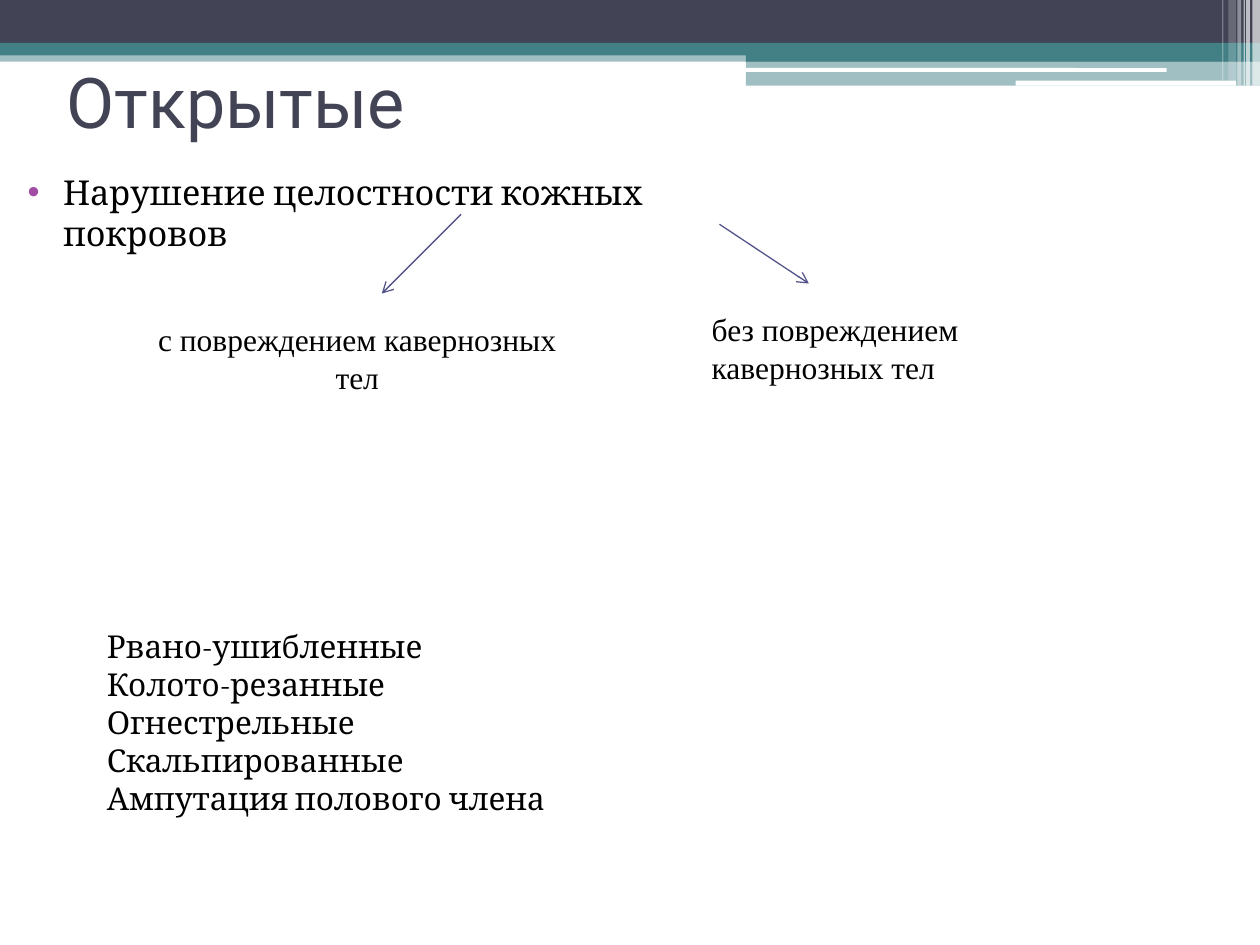
from typing import NamedTuple

from lxml.etree import SubElement
from pptx import Presentation
from pptx.dml.color import RGBColor
from pptx.enum.shapes import MSO_CONNECTOR, MSO_SHAPE
from pptx.enum.text import MSO_ANCHOR, MSO_AUTO_SIZE, PP_ALIGN
from pptx.oxml.ns import qn
from pptx.util import Inches, Pt

DARK, TEAL, WHITE, BLACK = "424456", "438086", "FFFFFF", "000000"
ARROW_COLOR, BULLET_COLOR = "53548A", "A04DA3"


class Bar(NamedTuple):
    left: float
    top: float
    width: float
    height: float
    color: str
    opacity: int = 100
    rounded: bool = False


class Label(NamedTuple):
    left: float
    top: float
    width: float
    height: float
    lines: list[str]
    font: str
    align: PP_ALIGN = PP_ALIGN.LEFT


class Arrow(NamedTuple):
    x1: float
    y1: float
    x2: float
    y2: float


BANDS = [
    Bar(0, 0.4, 10, 0.09, TEAL, 50),
    Bar(0, 0, 10, 0.34, DARK),
    Bar(0, 0.34, 10, 0.1, TEAL),
    Bar(5.92, 0.39, 4.08, 0.1, TEAL),
    Bar(5.92, 0.48, 4.08, 0.2, TEAL, 50),
    Bar(5.91, 0.54, 3.35, 0.03, WHITE, rounded=True),
    Bar(8.06, 0.64, 1.75, 0.04, WHITE, rounded=True),
]
# Translucent stripes in the right corner: left, width, height, opacity
STRIPES = [
    Bar(left, 0, width, height, WHITE, opacity)
    for left, width, height, opacity in [
        (9.94, 0.06, 0.68, 65), (9.89, 0.03, 0.68, 65), (9.87, 0.01, 0.68, 60),
        (9.82, 0.03, 0.68, 40), (9.75, 0.06, 0.64, 20), (9.7, 0.01, 0.64, 30),
    ]
]
WOUND_TYPES = Label(0.75, 4.93, 8.9, 2.22, [
    "Рвано-ушибленные", "Колото-резанные", "Огнестрельные",
    "Скальпированные", "Ампутация полового члена",
], "Cambria")
BRANCHES = [
    Label(1.14, 2.49, 3.39, 0.71, ["с повреждением кавернозных тел"],
          "Times New Roman", PP_ALIGN.CENTER),
    Label(5.55, 2.41, 2.99, 1.01, ["без повреждением кавернозных тел"],
          "Times New Roman"),
]
ARROWS = [Arrow(3.66, 1.7, 3.03, 2.33), Arrow(5.71, 1.78, 6.42, 2.25)]


def rgb(color: str) -> RGBColor:
    return RGBColor.from_string(color)


def apply(target, values: dict) -> None:
    for key, value in values.items():
        setattr(target, key, value)


def place(shape, left: float, top: float, width: float, height: float) -> None:
    apply(shape, {"left": Inches(left), "top": Inches(top),
                  "width": Inches(width), "height": Inches(height)})


def write(paragraph, text: str, font: str, size: float, color: str) -> None:
    run = paragraph.add_run()
    run.text = text
    apply(run.font, {"name": font, "size": Pt(size)})
    run.font.color.rgb = rgb(color)


def draw_bar(slide, bar: Bar) -> None:
    preset = MSO_SHAPE.ROUNDED_RECTANGLE if bar.rounded else MSO_SHAPE.RECTANGLE
    shape = slide.shapes.add_shape(
        preset, *map(Inches, (bar.left, bar.top, bar.width, bar.height)))
    shape.shadow.inherit = False
    shape.fill.solid()
    shape.fill.fore_color.rgb = rgb(bar.color)
    shape.line.fill.background()
    if bar.opacity < 100:
        color = shape.fill._xPr.find(".//" + qn("a:srgbClr"))
        SubElement(color, qn("a:alpha"), val=str(bar.opacity * 1000))


def draw_label(slide, label: Label) -> None:
    box = slide.shapes.add_textbox(
        *map(Inches, (label.left, label.top, label.width, label.height)))
    frame = box.text_frame
    apply(frame, {"word_wrap": True, "auto_size": MSO_AUTO_SIZE.SHAPE_TO_FIT_TEXT})
    for index, line in enumerate(label.lines):
        paragraph = frame.add_paragraph() if index else frame.paragraphs[0]
        paragraph.alignment = label.align
        write(paragraph, line, label.font, 18, BLACK)


def draw_arrow(slide, arrow: Arrow) -> None:
    connector = slide.shapes.add_connector(
        MSO_CONNECTOR.STRAIGHT, *map(Inches, arrow))
    connector.line.color.rgb = rgb(ARROW_COLOR)
    connector.line.width = Pt(0.75)
    SubElement(connector.line._get_or_add_ln(), qn("a:tailEnd"), type="arrow")
    SubElement(connector._element.spPr, qn("a:effectLst"))


def fill_title(title) -> None:
    place(title, 0.43, 0.21, 9, 1.17)
    apply(title.text_frame, {"vertical_anchor": MSO_ANCHOR.MIDDLE,
                             "auto_size": MSO_AUTO_SIZE.NONE})
    heading = title.text_frame.paragraphs[0]
    heading.alignment = PP_ALIGN.LEFT
    write(heading, "Открытые", "Roboto", 40, DARK)


def fill_body(body) -> None:
    place(body, 0, 1.31, 6.47, 0.58)
    body.text_frame.auto_size = MSO_AUTO_SIZE.NONE
    definition = body.text_frame.paragraphs[0]
    definition.space_before = Pt(3)
    write(definition, "Нарушение целостности кожных покровов",
          "Cambria", 19.6, BLACK)
    # Hanging indent and coloured bullet
    properties = definition._p.get_or_add_pPr()
    properties.set("marL", str(Inches(0.4)))
    properties.set("indent", str(Inches(-0.28)))
    bullet_color = SubElement(properties, qn("a:buClr"))
    SubElement(bullet_color, qn("a:srgbClr"), val=BULLET_COLOR)
    SubElement(properties, qn("a:buChar"), char="•")


def main() -> None:
    prs = Presentation()
    apply(prs, {"slide_width": Inches(10), "slide_height": Inches(7.5)})
    slide = prs.slides.add_slide(prs.slide_layouts[1])

    # Header decoration
    for bar in BANDS + STRIPES:
        draw_bar(slide, bar)

    # Title and definition
    fill_title(slide.shapes.title)
    fill_body(slide.placeholders[1])

    # Two branches and the list of wound types
    draw_label(slide, WOUND_TYPES)
    for arrow in ARROWS:
        draw_arrow(slide, arrow)
    for branch in BRANCHES:
        draw_label(slide, branch)

    prs.save("out.pptx")


if __name__ == "__main__":
    main()
